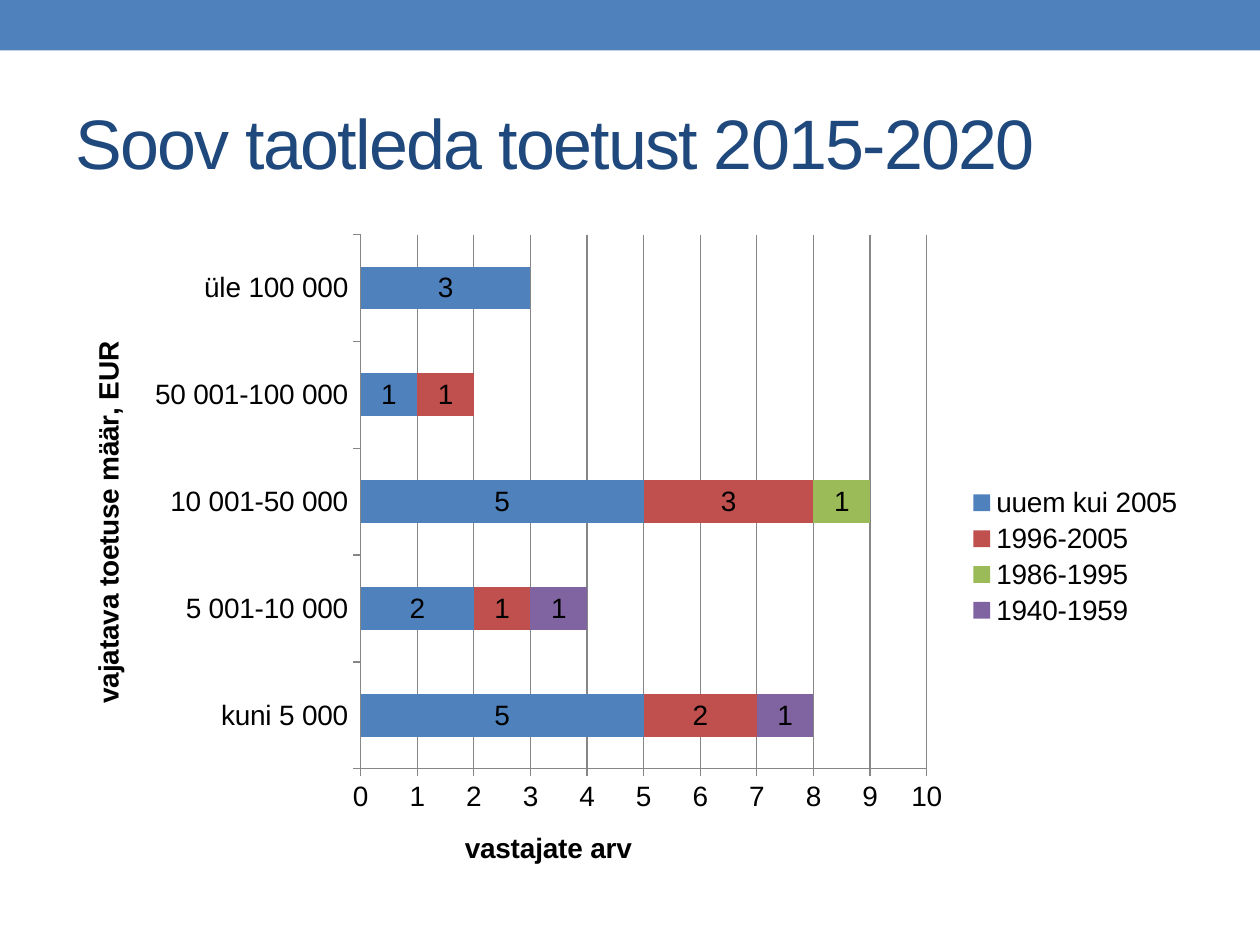
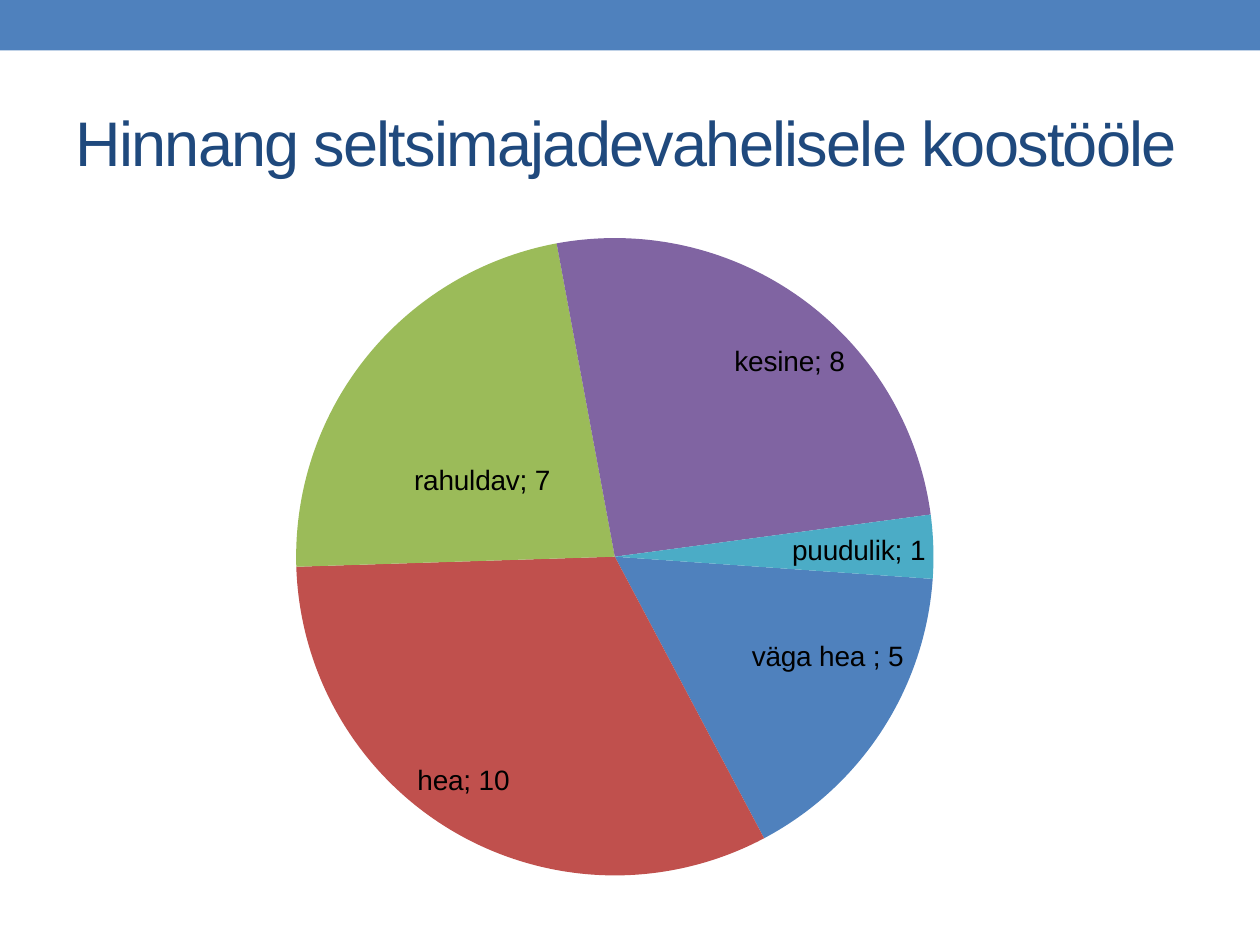
from dataclasses import dataclass
from pptx import Presentation
from pptx.chart.data import CategoryChartData
from pptx.dml.color import RGBColor
from pptx.enum.chart import XL_CHART_TYPE, XL_LABEL_POSITION, XL_LEGEND_POSITION, XL_TICK_MARK
from pptx.enum.shapes import MSO_SHAPE
from pptx.enum.text import MSO_ANCHOR, PP_ALIGN
from pptx.oxml import parse_xml
from pptx.oxml.ns import nsdecls, qn
from pptx.util import Cm, Pt


@dataclass(frozen=True)
class Theme:
    font = "Arial"
    navy = RGBColor.from_string("1F497D")
    black = RGBColor.from_string("000000")
    grey = RGBColor.from_string("868686")
    fills = [RGBColor.from_string(c) for c in
             ("4F81BD", "C0504D", "9BBB59", "8064A2", "4BACC6")]
    text = Pt(16)
    tight = "-100"
    line = Pt(0.75)


theme = Theme()
wide, high = Cm(22.86), Cm(13.54)  # chart area


def place(part, slot, inner=False, **spots):
    """Lay out a chart part by lengths in cm within the chart area."""
    old = part.find(qn("c:layout"))
    if old is not None:
        part.remove(old)
    target = '<c:layoutTarget val="inner"/>' if inner else ""
    modes = "" if part.tag == qn("c:dLbl") else (
        '<c:xMode val="edge"/><c:yMode val="edge"/>')
    sizes = "".join(
        f'<c:{key} val="{Cm(val) / (wide if key in "xw" else high):.5f}"/>'
        for key, val in spots.items())
    part.insert(slot, parse_xml(
        f'<c:layout {nsdecls("c")}><c:manualLayout>{target}{modes}{sizes}'
        "</c:manualLayout></c:layout>"))


def add_page(title, size, kind, data):
    """Add a slide with its title and chart; return the chart."""
    slide = deck.slides.add_slide(deck.slide_layouts[5])
    head = slide.shapes.title
    head.left, head.top, head.width, head.height = Cm(1.27), Cm(1.48), wide, Cm(2.74)
    frame = head.text_frame
    frame.text = title
    frame.vertical_anchor = MSO_ANCHOR.MIDDLE
    para = frame.paragraphs[0]
    para.alignment = PP_ALIGN.LEFT
    run = para.runs[0]
    run.font.name, run.font.size = theme.font, size
    run.font.color.rgb = theme.navy
    run.font._element.set("spc", theme.tight)
    chart = slide.shapes.add_chart(kind, Cm(1.27), Cm(4.45), wide, high, data).chart
    chart.has_title = False
    chart.font.name, chart.font.size = theme.font, theme.text
    chart.font.color.rgb = theme.black
    return chart


deck = Presentation()
deck.slide_width, deck.slide_height = Cm(25.4), Cm(19.05)

# Slide 1: stacked bars of the support wanted
data = CategoryChartData(number_format="###0")
data.categories = ["kuni 5 000", "5 001-10 000", "10 001-50 000",
                   "50 001-100 000", "üle 100 000"]
for name, vals in {
    "uuem kui 2005": (5, 2, 5, 1, 3),
    "1996-2005": (2, 1, 3, 1, 0),
    "1986-1995": (0, 0, 1, 0, 0),
    "1940-1959": (1, 1, 0, 0, 0),
}.items():
    data.add_series(name, vals)
chart = add_page("Soov taotleda toetust 2015-2020", Pt(40),
                 XL_CHART_TYPE.BAR_STACKED, data)
place(chart.element.xpath("//c:plotArea")[0], 0, True, x=6, y=0.28, w=11.41, h=10.77)

# Bars and their values, with no label on a zero
plot = chart.plots[0]
plot.gap_width, plot.overlap, plot.vary_by_categories = 150, 100, False
for bar, fill in zip(plot.series, theme.fills):
    bar.format.fill.solid()
    bar.format.fill.fore_color.rgb = fill
    labels = bar.data_labels
    labels.show_value = True
    labels.position = XL_LABEL_POSITION.CENTER
    blanks = [i for i, val in enumerate(bar.values) if val == 0]
    for slot, i in enumerate(blanks):
        labels._element.insert(slot, parse_xml(
            f'<c:dLbl {nsdecls("c")}><c:idx val="{i}"/><c:delete val="1"/></c:dLbl>'))

# Axes and their titles
chart.value_axis.minimum_scale = 0
chart.value_axis.maximum_scale = 10
chart.value_axis.major_unit = 1
grid = chart.value_axis.major_gridlines.format.line
for axis, name, turn, x, y in (
    (chart.category_axis, "vajatava toetuse määr, EUR", -5400000, 0.45, 2.34),
    (chart.value_axis, "vastajate arv", 0, 8, 12.19),
):
    axis.major_tick_mark = XL_TICK_MARK.OUTSIDE
    frame = axis.axis_title.text_frame
    frame.text = name
    font = frame.paragraphs[0].runs[0].font
    font.name, font.size, font.bold = theme.font, theme.text, True
    font.color.rgb = theme.black
    part = axis.axis_title._element
    body = part.xpath(".//a:bodyPr")[0]
    body.set("rot", str(turn))
    body.set("vert", "horz")
    place(part, 1, x=x, y=y)
for line in (grid, chart.category_axis.format.line, chart.value_axis.format.line):
    line.color.rgb = theme.grey
    line.width = theme.line

# Legend
chart.has_legend = True
chart.legend.position = XL_LEGEND_POSITION.RIGHT
chart.legend.include_in_layout = False

# Slide 2: pie of the ratings
data = CategoryChartData()
data.categories = ["väga hea ", "hea", "rahuldav", "kesine", "puudulik"]
data.add_series("Series 1", (5, 10, 7, 8, 1))
chart = add_page("Hinnang seltsimajadevahelisele koostööle", Pt(36),
                 XL_CHART_TYPE.PIE, data)
chart.has_legend = False
place(chart.element.xpath("//c:plotArea")[0], 0, True, x=4.7, y=0.35, w=12.85, h=12.85)
pie = chart.element.xpath("//c:pieChart")[0]
for old in pie.findall(qn("c:firstSliceAng")):
    pie.remove(old)
pie.append(parse_xml(f'<c:firstSliceAng {nsdecls("c")} val="94"/>'))

# Slices
wheel = chart.plots[0].series[0]
for i, fill in enumerate(theme.fills):
    slice_fill = wheel.points[i].format.fill
    slice_fill.solid()
    slice_fill.fore_color.rgb = fill
    wheel.points[i].data_label.position = XL_LABEL_POSITION.CENTER

# Slice labels, moved from the middle of each slice
moves = [(1.6, 0.27), (-1.44, 1.74), (-0.17, 0.48), (1.64, -1.33), (1.71, -0.02)]
for label, (x, y) in zip(chart.element.xpath("//c:dLbl"), moves):
    place(label, 1, x=x, y=y)
    label.find(qn("c:showCatName")).set("val", "1")
    label.append(parse_xml(f'<c:separator {nsdecls("c")}>; </c:separator>'))

# Top band, shared through the slide master
band = deck.slides[0].shapes.add_shape(
    MSO_SHAPE.RECTANGLE, 0, 0, deck.slide_width, Cm(1.02))
band.shadow.inherit = False
band.fill.solid()
band.fill.fore_color.rgb = theme.fills[0]
band.line.fill.background()
deck.slide_master.shapes.element.insert(2, band.element)

deck.save("out.pptx")
